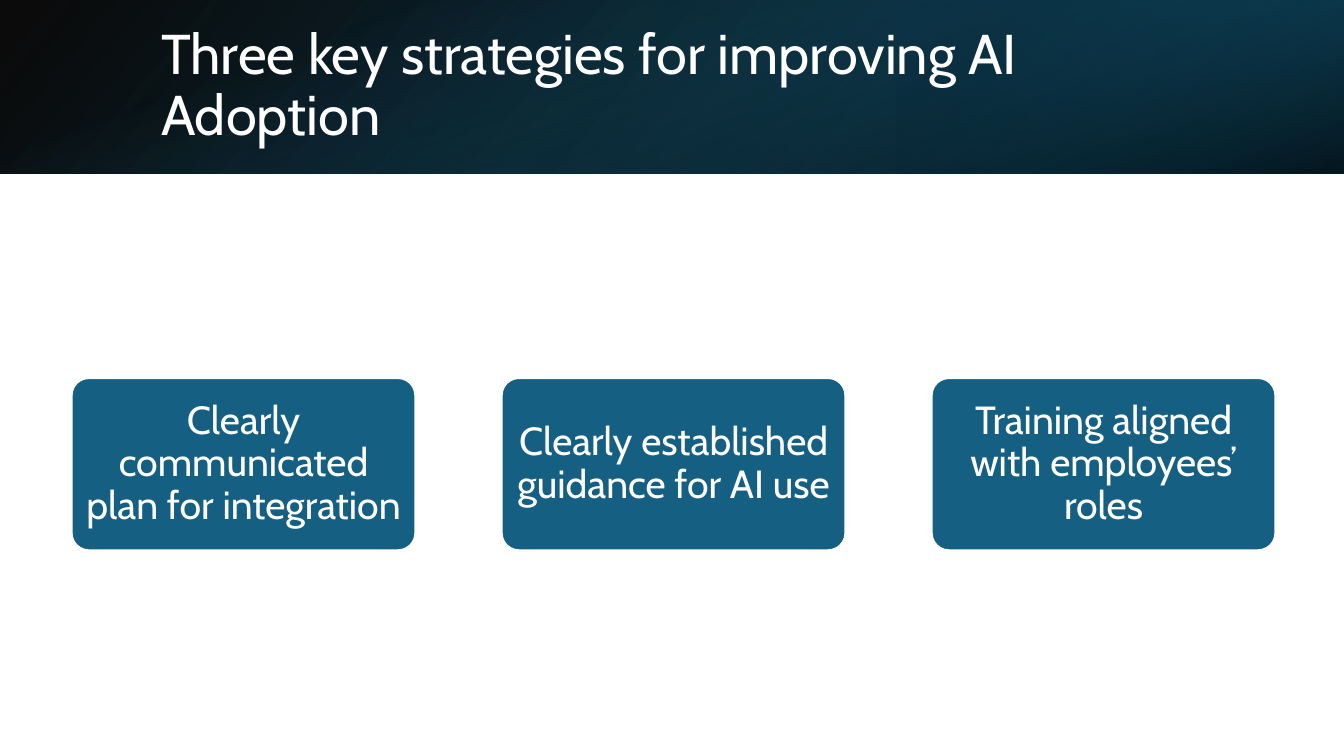
from dataclasses import dataclass

from lxml import etree
from pptx import Presentation
from pptx.dml.color import RGBColor
from pptx.enum.shapes import MSO_SHAPE
from pptx.enum.text import MSO_ANCHOR, PP_ALIGN
from pptx.oxml.ns import qn
from pptx.shapes.autoshape import Shape
from pptx.slide import Slide
from pptx.text.text import TextFrame
from pptx.util import Inches, Pt

RECT = MSO_SHAPE.RECTANGLE
ROUND = MSO_SHAPE.ROUNDED_RECTANGLE
MIDDLE = MSO_ANCHOR.MIDDLE
LEFT = PP_ALIGN.LEFT
CENTER = PP_ALIGN.CENTER


@dataclass(frozen=True)
class Theme:
    font: str = "Cabin"
    white: str = "FFFFFF"
    black: str = "000000"
    teal: str = "156082"
    deep: str = "104862"
    night: str = "0B3041"
    title: int = 40
    body: int = 28


@dataclass(frozen=True)
class Box:
    left: float
    top: float
    width: float
    height: float

    def place(self) -> tuple[int, ...]:
        return tuple(map(Inches, (self.left, self.top, self.width, self.height)))


@dataclass(frozen=True)
class Stop:
    at: float
    color: str
    alpha: int = 100


@dataclass(frozen=True)
class Band:
    box: Box
    angle: int
    stops: tuple[Stop, Stop]
    turn: int = 0
    flip: bool = False


THEME = Theme()
WIDE, HIGH, HEAD = 13.33, 7.5, 1.72

# A quarter turn lays the tall third band across the header.
BANDS = (
    Band(Box(0, 0, WIDE, HEAD), 140,
         (Stop(0, THEME.black, 96), Stop(1, THEME.deep)), flip=True),
    Band(Box(8.89, 0, 4.44, HEAD), 320,
         (Stop(0.19, THEME.night, 68), Stop(1, THEME.teal, 79)), 180, True),
    Band(Box((WIDE - HEAD) / 2, (HEAD - WIDE) / 2, HEAD, WIDE), 340,
         (Stop(0.23, THEME.teal, 0), Stop(0.99, THEME.black, 74)), 90),
)

TITLE = "Three key strategies for improving AI Adoption"
CARDS = (
    "Clearly communicated plan for integration",
    "Clearly established guidance for AI use",
    "Training aligned with employees’ roles",
)
FIRST = Box(0.71, 3.75, 3.41, 1.71)
LAST = 9.24
STEP = (LAST - FIRST.left) / (len(CARDS) - 1)

FRAME = {"word_wrap": True, "vertical_anchor": MIDDLE}
INSETS = {
    "margin_left": Inches(0.06),
    "margin_right": Inches(0.06),
    "margin_top": Inches(0.04),
    "margin_bottom": Inches(0.04),
}


def apply(target: object, style: dict[str, object]) -> None:
    for name, value in style.items():
        setattr(target, name, value)


def write(frame: TextFrame, text: str, size: int, align: PP_ALIGN) -> None:
    apply(frame, FRAME)
    line = frame.paragraphs[0]
    apply(line, {"alignment": align, "line_spacing": 0.9})
    run = line.add_run()
    run.text = text
    apply(run.font, {"name": THEME.font, "size": Pt(size)})
    run.font.color.rgb = RGBColor.from_string(THEME.white)


def add_shape(slide: Slide, kind: MSO_SHAPE, box: Box) -> Shape:
    shape = slide.shapes.add_shape(kind, *box.place())
    shape.shadow.inherit = False
    return shape


def add_band(slide: Slide, band: Band) -> None:
    """Draw a gradient band; its angle runs clockwise."""
    shape = add_shape(slide, RECT, band.box)
    shape.rotation = band.turn
    shape.line.fill.background()
    props = shape.element.spPr
    if band.flip:
        props.find(qn("a:xfrm")).set("flipH", "1")
    shape.fill.gradient()
    shape.fill.gradient_angle = 360 - band.angle
    for mark, stop in zip(shape.fill.gradient_stops, band.stops):
        mark.position = stop.at
        mark.color.rgb = RGBColor.from_string(stop.color)
    for tint, stop in zip(props.findall(".//" + qn("a:srgbClr")), band.stops):
        alpha = etree.SubElement(tint, qn("a:alpha"))
        alpha.set("val", str(stop.alpha * 1000))


def add_card(slide: Slide, box: Box, text: str) -> None:
    card = add_shape(slide, ROUND, box)
    card.adjustments[0] = 0.1
    card.fill.solid()
    card.fill.fore_color.rgb = RGBColor.from_string(THEME.teal)
    card.line.color.rgb = RGBColor.from_string(THEME.white)
    card.line.width = Pt(1.5)
    apply(card.text_frame, INSETS)
    write(card.text_frame, text, THEME.body, CENTER)


def main() -> None:
    deck = Presentation()
    apply(deck, {"slide_width": Inches(WIDE), "slide_height": Inches(HIGH)})
    slide = deck.slides.add_slide(deck.slide_layouts[6])
    for band in BANDS:
        add_band(slide, band)
    title = slide.shapes.add_textbox(*Box(1.5, 0.38, 10.98, 0.96).place())
    write(title.text_frame, TITLE, THEME.title, LEFT)
    for i, text in enumerate(CARDS):
        left = FIRST.left + i * STEP
        add_card(slide, Box(left, FIRST.top, FIRST.width, FIRST.height), text)
    deck.save("out.pptx")


if __name__ == "__main__":
    main()
